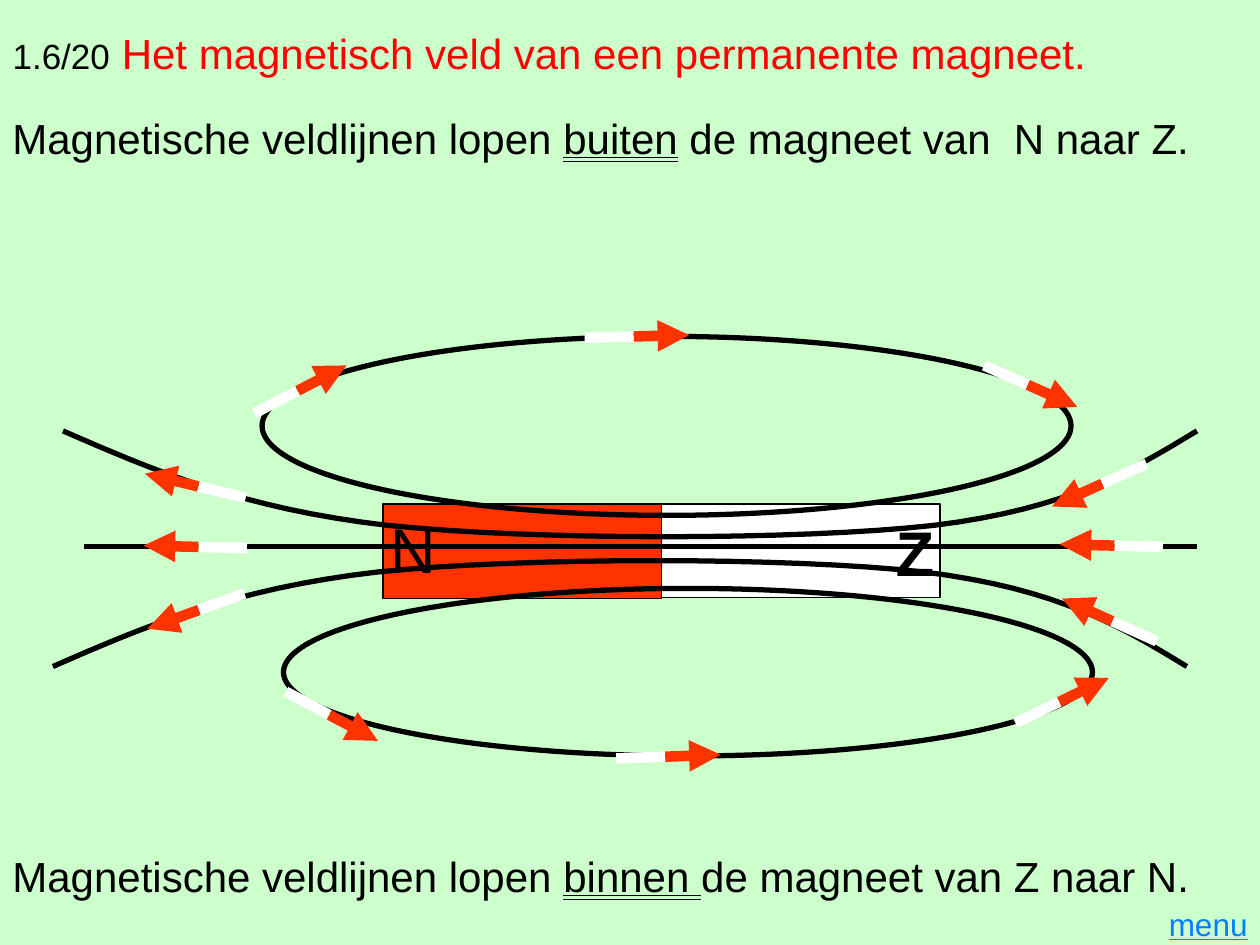
"""Draw the field lines of a bar magnet."""
from dataclasses import dataclass
from typing import Any, NamedTuple

import lxml.etree
import pptx
import pptx.dml.color
import pptx.enum.shapes
import pptx.enum.text
import pptx.oxml.ns
import pptx.util

Inches = pptx.util.Inches
Pt = pptx.util.Pt
Shape = pptx.enum.shapes.MSO_SHAPE
Align = pptx.enum.text.PP_ALIGN
Under = pptx.enum.text.MSO_UNDERLINE
Point = tuple[float, float]


@dataclass(frozen=True)
class Theme:
    font: str = "Arial"
    back: str = "CCFFCC"
    ink: str = "000000"
    head: str = "FF0000"
    north: str = "FF3300"
    south: str = "FFFFFF"
    link: str = "0080FF"
    pole: float = 36
    text: float = 24
    note: float = 20
    menu: float = 18
    edge: float = 0.75
    field: float = 3
    needle: float = 6
    gap: float = 1.5


class Box(NamedTuple):
    left: float
    top: float
    width: float
    height: float


class Run(NamedTuple):
    text: str
    size: float
    color: str
    bold: bool = False
    under: Any = False


class Label(NamedTuple):
    box: Box
    runs: list[Run]
    align: Any = Align.LEFT


class Needle(NamedTuple):
    start: Point
    tip: Point


THEME = Theme()
SPLIT = 0.47
STEPS = 16
MIRROR = 8.71
SHIFT = 0.08

BARS = [(Box(3.04, 4, 2.21, 0.75), THEME.north), (Box(5.25, 4, 2.21, 0.74), THEME.south)]
LOOPS = [Box(2.25, 4.67, 6.42, 1.33), Box(2.08, 2.67, 6.42, 1.42)]
CURVE = [
    (0.42, 5.29), (1.13, 4.98), (1.85, 4.67), (3, 4.54), (4.15, 4.42),
    (6.26, 4.42), (7.33, 4.54), (8.4, 4.67), (8.91, 4.98), (9.42, 5.29),
]
NEEDLES = [
    Needle((2.02, 3.28), (2.75, 2.9)),
    Needle((7.81, 2.9), (8.55, 3.23)),
    Needle((8.06, 5.74), (8.8, 5.38)),
    Needle((4.64, 2.68), (5.47, 2.66)),
    Needle((1.95, 3.95), (1.15, 3.76)),
    Needle((9.18, 5.09), (8.43, 4.75)),
    Needle((9.1, 3.68), (8.35, 4.02)),
    Needle((4.89, 6.02), (5.72, 5.99)),
    Needle((1.96, 4.35), (1.14, 4.33)),
    Needle((2.27, 5.49), (3, 5.88)),
    Needle((1.94, 4.71), (1.17, 4.99)),
    Needle((9.23, 4.34), (8.41, 4.32)),
]
TITLE = Label(Box(0, 0, 10, 0.84), [
    Run("1.6/20", THEME.note, THEME.ink),
    Run(" ", THEME.text, THEME.ink),
    Run("Het magnetisch veld van een permanente magneet.", THEME.text, THEME.head),
])
POLES = [
    Label(Box(3, 4, 0.58, 0.7), [Run("N", THEME.pole, THEME.ink)]),
    Label(Box(7.01, 4.03, 0.67, 0.7), [Run("Z", THEME.pole, THEME.ink, True)]),
]
RULES = [
    Label(Box(0, top, 10, 0.51), [
        Run("Magnetische veldlijnen lopen ", THEME.text, THEME.ink),
        Run(place, THEME.text, THEME.ink, under=Under.DOUBLE_LINE),
        Run(rest, THEME.text, THEME.ink),
    ])
    for top, place, rest in [
        (0.84, "buiten", " de magneet van  N naar Z."),
        (6.7, "binnen ", "de magneet van Z naar N."),
    ]
]
MENU = Label(Box(9.17, 7.13, 0.83, 0.4),
             [Run("menu", THEME.menu, THEME.link, under=True)], Align.RIGHT)


def color(code: str) -> pptx.dml.color.RGBColor:
    return pptx.dml.color.RGBColor.from_string(code)


def stroke(line: Any, code: str, width: float) -> None:
    line.color.rgb = color(code)
    line.width = Pt(width)


def write(shape: Any, label: Label) -> None:
    frame = shape.text_frame
    frame.word_wrap = True
    para = frame.paragraphs[0]
    para.alignment = label.align
    for item in label.runs:
        run = para.add_run()
        run.text = item.text
        font = run.font
        font.name, font.size = THEME.font, Pt(item.size)
        font.bold, font.underline = item.bold, item.under
        font.color.rgb = color(item.color)


def add_label(shapes: Any, label: Label) -> None:
    shape = shapes.add_textbox(*map(Inches, label.box))
    write(shape, label)
    shape.text_frame.paragraphs[0].space_before = Pt(THEME.gap)


def add_title(slide: Any, label: Label) -> None:
    shape = slide.shapes.title
    shape.left, shape.top, shape.width, shape.height = map(Inches, label.box)
    shape.text_frame.vertical_anchor = pptx.enum.text.MSO_ANCHOR.MIDDLE
    write(shape, label)


def add_form(shapes: Any, kind: Any, box: Box, width: float, fill: str = "") -> None:
    shape = shapes.add_shape(kind, *map(Inches, box))
    shape.shadow.inherit = False
    if fill:
        shape.fill.solid()
        shape.fill.fore_color.rgb = color(fill)
    else:
        shape.fill.background()
    stroke(shape.line, THEME.ink, width)


def add_line(shapes: Any, start: Point, end: Point, code: str, width: float,
             arrow: bool = False) -> None:
    kind = pptx.enum.shapes.MSO_CONNECTOR.STRAIGHT
    line = shapes.add_connector(kind, *map(Inches, start + end))
    stroke(line.line, code, width)
    props = line._element.spPr
    name = pptx.oxml.ns.qn
    if arrow:
        lxml.etree.SubElement(props.find(name("a:ln")), name("a:tailEnd"), type="triangle")
    lxml.etree.SubElement(props, name("a:effectLst"))


def add_needle(shapes: Any, needle: Needle) -> None:
    start, tip = needle
    mid = (start[0] + SPLIT * (tip[0] - start[0]), start[1] + SPLIT * (tip[1] - start[1]))
    group = shapes.add_group_shape().shapes
    add_line(group, start, mid, THEME.south, THEME.needle)
    add_line(group, mid, tip, THEME.north, THEME.needle, True)


def blend(knots: list[Point], t: float) -> Point:
    s = 1 - t
    parts = (s ** 3, 3 * s * s * t, 3 * s * t * t, t ** 3)
    x, y = (sum(w * k[i] for w, k in zip(parts, knots)) for i in (0, 1))
    return x, y


def add_curve(shapes: Any, knots: list[Point]) -> None:
    dots = [blend(knots[i:i + 4], step / STEPS)
            for i in range(0, len(knots) - 1, 3) for step in range(1, STEPS + 1)]
    first, *rest = [(Inches(x), Inches(y)) for x, y in [knots[0], *dots]]
    form = shapes.build_freeform(*first)
    form.add_line_segments(rest, close=False)
    shape = form.convert_to_shape()
    shape.shadow.inherit = False
    shape.fill.background()
    stroke(shape.line, THEME.ink, THEME.field)


def main() -> None:
    deck = pptx.Presentation()
    deck.slide_width, deck.slide_height = Inches(10), Inches(7.5)
    slide = deck.slides.add_slide(deck.slide_layouts[5])
    slide.background.fill.solid()
    slide.background.fill.fore_color.rgb = color(THEME.back)
    shapes = slide.shapes
    add_title(slide, TITLE)
    magnet = shapes.add_group_shape().shapes
    for box, fill in BARS:
        add_form(magnet, Shape.RECTANGLE, box, THEME.edge, fill)
    for label in POLES:
        add_label(magnet, label)
    add_line(shapes, (0.67, 4.34), (9.5, 4.34), THEME.ink, THEME.field)
    for knots in (CURVE, [(x + SHIFT, MIRROR - y) for x, y in CURVE]):
        add_curve(shapes, knots)
    for box in LOOPS:
        add_form(shapes, Shape.OVAL, box, THEME.field)
    for label in [*RULES, MENU]:
        add_label(shapes, label)
    for needle in NEEDLES:
        add_needle(shapes, needle)
    deck.save("out.pptx")


if __name__ == "__main__":
    main()
